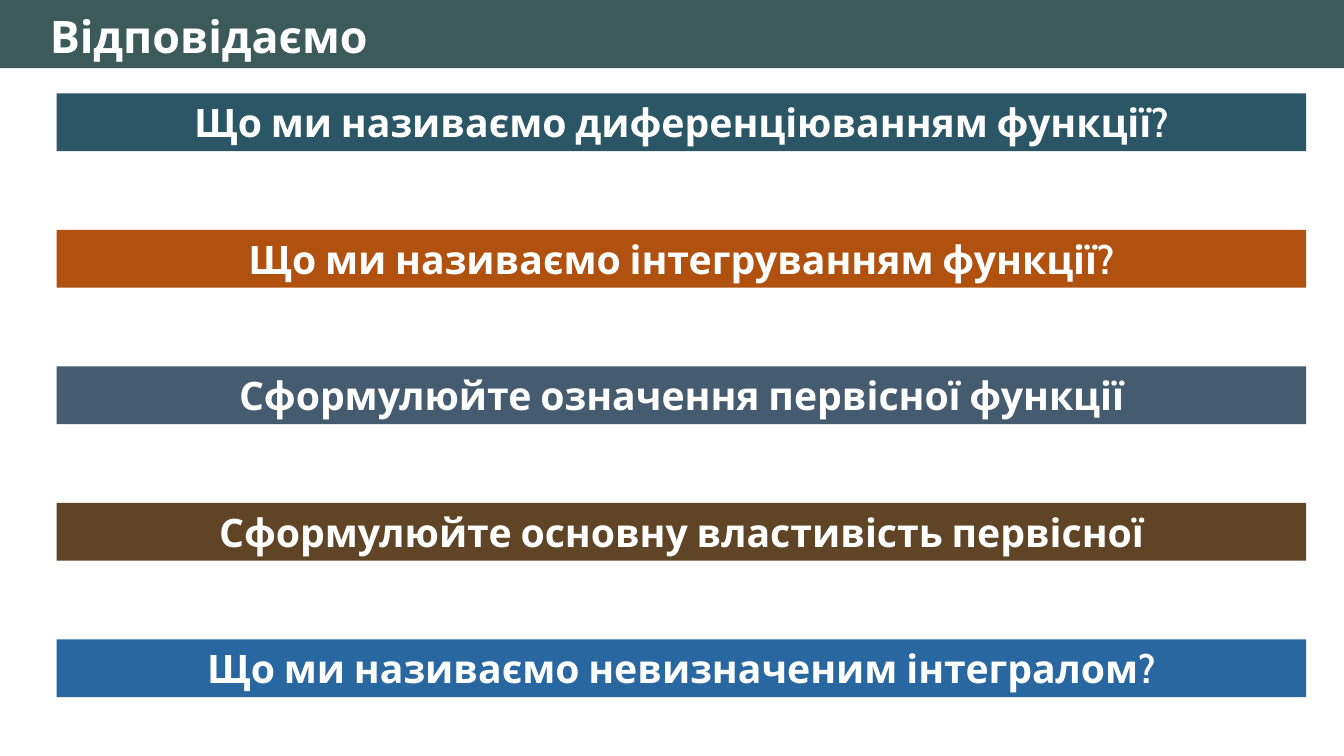
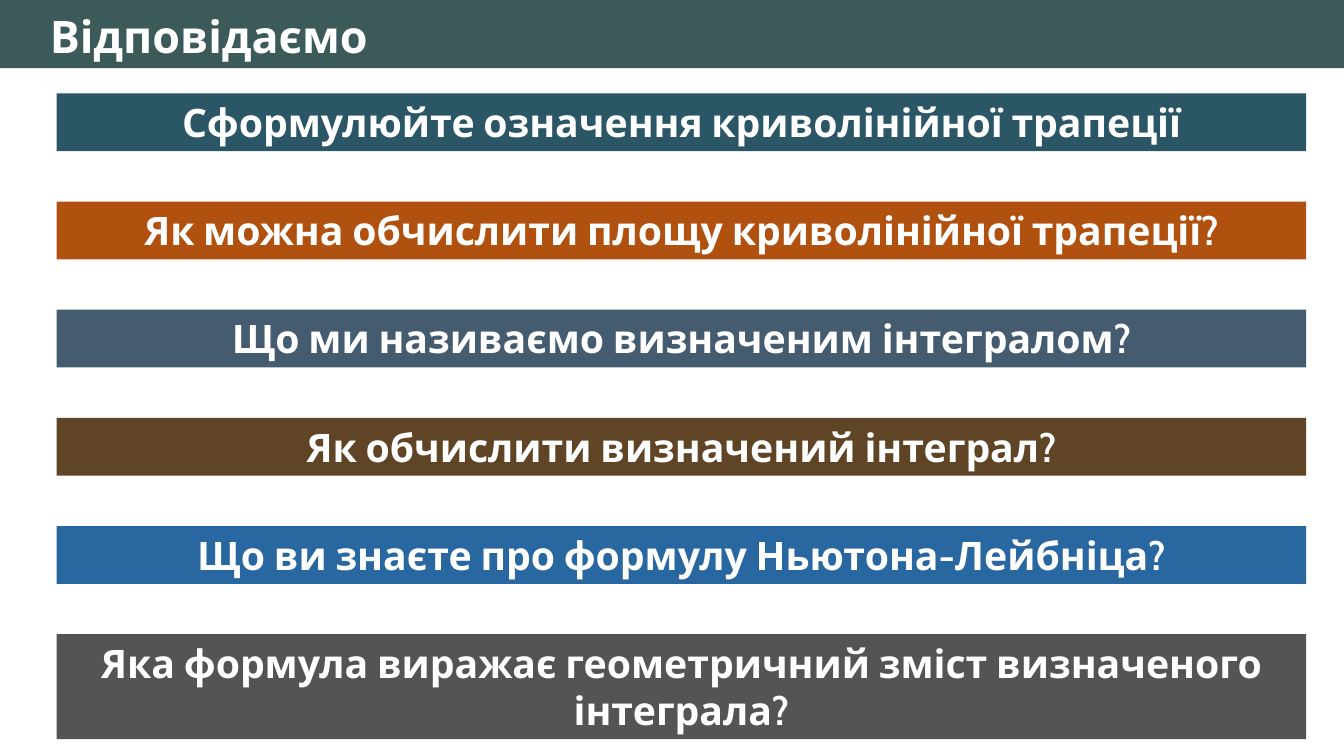
import pptx
import pptx.dml.color
import pptx.enum.shapes
import pptx.enum.text
import pptx.util

PX = 9525  # EMU per px, 96 px to the inch
SLIDE_WIDTH, SLIDE_HEIGHT = 1280, 720
FONT = "Cabin"
COLOURS = {
    "header": "3C5A59",
    "text": "FFFFFF",
    "teal": "2B5666",
    "orange": "B1510F",
    "slate": "455B6F",
    "brown": "604426",
    "blue": "2867A0",
    "grey": "545454",
}
BAND_COLOURS = ["teal", "orange", "slate", "brown", "blue", "grey"]
BAND_LEFT, BAND_TOP, BAND_WIDTH = 54, 89, 1190
LINE_HEIGHTS = {1: 55, 2: 100}  # band height by number of text lines

TITLE = "Відповідаємо"
# Each slide: distance between band tops, then (question, text lines)
SLIDES = [
    (130, [
        ("Що ми називаємо диференціюванням функції?", 1),
        ("Що ми називаємо інтегруванням функції?", 1),
        ("Сформулюйте означення первісної функції", 1),
        ("Сформулюйте основну властивість первісної", 1),
        ("Що ми називаємо невизначеним інтегралом?", 1),
    ]),
    (103, [
        ("Сформулюйте означення криволінійної трапеції", 1),
        ("Як можна обчислити площу криволінійної трапеції?", 1),
        ("Що ми називаємо визначеним інтегралом?", 1),
        ("Як обчислити визначений інтеграл?", 1),
        ("Що ви знаєте про формулу Ньютона-Лейбніца?", 1),
        ("Яка формула виражає геометричний зміст визначеного інтеграла?", 2),
    ]),
]


def add_band(page, left, top, width, height, colour):
    band = page.shapes.add_shape(
        pptx.enum.shapes.MSO_SHAPE.RECTANGLE,
        left * PX, top * PX, width * PX, height * PX)
    band.shadow.inherit = False
    band.fill.solid()
    band.fill.fore_color.rgb = pptx.dml.color.RGBColor.from_string(COLOURS[colour])
    band.line.fill.background()
    return band


def write_text(box, text, size, align):
    frame = box.text_frame
    frame.word_wrap = True
    frame.auto_size = pptx.enum.text.MSO_AUTO_SIZE.SHAPE_TO_FIT_TEXT
    frame.vertical_anchor = pptx.enum.text.MSO_ANCHOR.TOP
    para = frame.paragraphs[0]
    para.alignment = align
    span = para.add_run()
    span.text = text
    span.font.name = FONT
    span.font.size = pptx.util.Pt(size)
    span.font.bold = True
    span.font.color.rgb = pptx.dml.color.RGBColor.from_string(COLOURS["text"])


deck = pptx.Presentation()
deck.slide_width = SLIDE_WIDTH * PX
deck.slide_height = SLIDE_HEIGHT * PX

for pitch, questions in SLIDES:
    page = deck.slides.add_slide(deck.slide_layouts[6])

    # Header
    add_band(page, 0, 0, SLIDE_WIDTH, 65, "header")
    title_box = page.shapes.add_textbox(38 * PX, 4 * PX, 1188 * PX, 61 * PX)
    write_text(title_box, TITLE, 32, pptx.enum.text.PP_ALIGN.LEFT)

    # Question bands
    for row, (question, lines) in enumerate(questions):
        band = add_band(page, BAND_LEFT, BAND_TOP + row * pitch, BAND_WIDTH,
                        LINE_HEIGHTS[lines], BAND_COLOURS[row])
        write_text(band, question, 28, pptx.enum.text.PP_ALIGN.CENTER)

deck.save("out.pptx")
